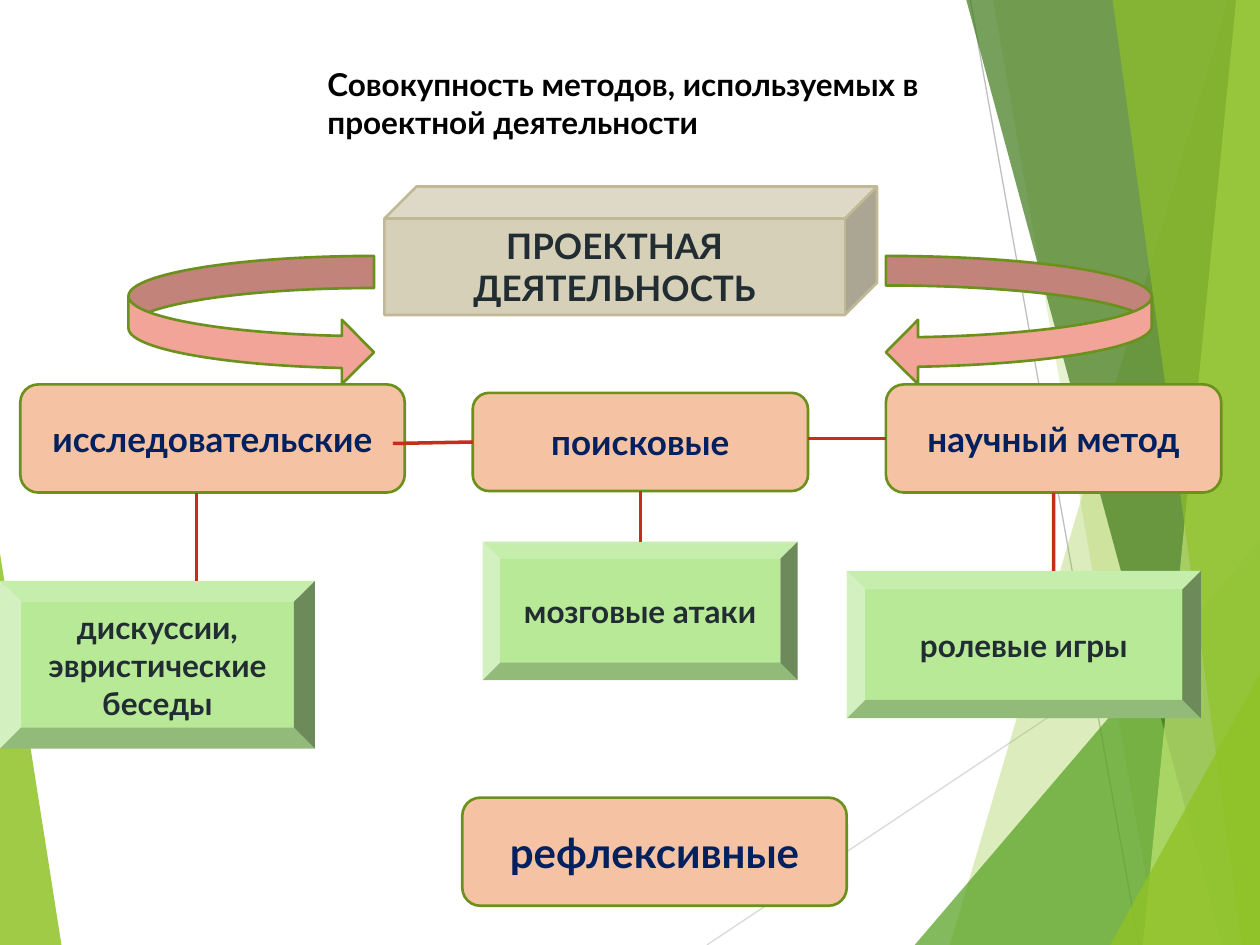
from typing import NamedTuple, Optional

from lxml.etree import SubElement
from pptx import Presentation
from pptx.dml.color import RGBColor
from pptx.enum.shapes import MSO_CONNECTOR, MSO_SHAPE
from pptx.enum.text import MSO_ANCHOR, PP_ALIGN
from pptx.oxml.ns import qn
from pptx.util import Cm, Pt

WIDE, HIGH = 25.4, 19.05
FONT = "Lato"
NAVY, SLATE, BLACK = "002060", "212D32", "000000"
PEACH, ROSE, MINT, SAND = "F5C2A3", "F2A499", "B7E996", "D6D0B8"
OLIVE, TAN, RED = "6B901C", "C1B995", "C42F1A"
LIME, GREEN, FOREST, PALE = "90C226", "54A021", "3F7819", "C0E474"
ROUND, BEVEL, CUBE = MSO_SHAPE.ROUNDED_RECTANGLE, MSO_SHAPE.BEVEL, MSO_SHAPE.CUBE


class Facet(NamedTuple):
    points: list
    color: str
    alpha: int


class Box(NamedTuple):
    kind: int
    place: tuple
    fill: str
    edge: Optional[str]
    lines: tuple = ()
    size: int = 20
    ink: str = NAVY


class Bend(NamedTuple):
    place: tuple
    width: float
    flip: bool


class Link(NamedTuple):
    start: tuple
    end: tuple
    head: Optional[str] = None
    tail: Optional[str] = None
    sites: tuple = (3, 1)


def band(top: float, base: float) -> list:
    """Return the outline between a slanted edge and the right side."""
    return [(top, 0), (base, HIGH), (WIDE, HIGH), (WIDE, 0)]


def wedge(left: float, top: float) -> list:
    """Return a triangle standing in the lower right corner."""
    return [(left, HIGH), (WIDE, top), (WIDE, HIGH)]


FACETS = [
    Facet([(0, 11.15), (1.24, HIGH), (0, HIGH)], LIME, 85),
    Facet(band(24.76, 19.15), LIME, 30),
    Facet(band(20.02, 23.34), LIME, 20),
    Facet(wedge(18.44, 10.9), GREEN, 72),
    Facet(band(19.48, 24.64), FOREST, 70),
    Facet(band(24.92, 23.04), PALE, 70),
    Facet(band(22.43, 25.04), LIME, 65),
    Facet(wedge(22.38, 13.59), LIME, 80),
]
BENDS = [
    Bend((2.59, 5.16, 4.95, 2.59), 0.25, False),
    Bend((17.86, 5.16, 5.36, 2.59), 0.23, True),
]
TOPIC = Box(CUBE, (7.75, 3.76, 9.93, 2.59), SAND, TAN,
            ("ПРОЕКТНАЯ ДЕЯТЕЛЬНОСТЬ",), 20, SLATE)
BOXES = [
    Box(ROUND, (0.41, 7.75, 7.75, 2.18), PEACH, OLIVE, ("исследовательские",)),
    Box(ROUND, (9.53, 7.92, 6.76, 1.98), PEACH, OLIVE, ("поисковые",)),
    Box(ROUND, (17.86, 7.75, 6.76, 2.18), PEACH, OLIVE, ("научный метод",)),
    Box(BEVEL, (0, 11.71, 6.35, 3.38), MINT, None,
        ("дискуссии,", "эвристические беседы"), 18, SLATE),
    Box(BEVEL, (9.73, 10.92, 6.35, 2.79), MINT, None, ("мозговые атаки",), 18, SLATE),
    Box(BEVEL, (17.07, 11.51, 7.14, 2.97), MINT, None, ("ролевые игры",), 18, SLATE),
    Box(ROUND, (9.32, 16.08, 7.75, 2.18), PEACH, OLIVE, ("рефлексивные",), 24),
]
LINKS = [
    Link((3.96, 9.93), (3.96, 11.71)),
    Link((7.92, 8.94), (9.53, 8.91), tail="поисковые"),
    Link((16.29, 8.84), (17.86, 8.84), tail="научный метод"),
    Link((21.24, 9.93), (21.24, 11.51), head="научный метод", sites=(2, 0)),
    Link((12.91, 9.9), (12.91, 10.92), head="поисковые", sites=(2, 0)),
]


def tint(target, color: str) -> None:
    """Give a fill a solid hex colour."""
    target.solid()
    target.fore_color.rgb = RGBColor.from_string(color)


def style(shape, fill: str, edge: Optional[str]) -> None:
    """Set the fill and outline of a shape and drop its shadow."""
    shape.shadow.inherit = False
    tint(shape.fill, fill)
    if edge:
        tint(shape.line.fill, edge)
        shape.line.width = Pt(1.5)
    else:
        shape.line.fill.background()


def write(frame, lines: tuple, size: int, ink: str, align: int) -> None:
    """Put bold lines of text into a frame."""
    frame.word_wrap = True
    for index, text in enumerate(lines):
        para = frame.add_paragraph() if index else frame.paragraphs[0]
        para.alignment = align
        run = para.add_run()
        run.text = text
        run.font.name = FONT
        run.font.size = Pt(size)
        run.font.bold = True
        run.font.color.rgb = RGBColor.from_string(ink)


def draw_facet(slide, facet: Facet) -> None:
    """Draw one translucent background facet."""
    first, *rest = [(Cm(x), Cm(y)) for x, y in facet.points]
    pen = slide.shapes.build_freeform(*first)
    pen.add_line_segments(rest, close=True)
    shape = pen.convert_to_shape()
    style(shape, facet.color, None)
    color = shape.element.spPr.find(qn("a:solidFill"))[0]
    SubElement(color, qn("a:alpha"), val=str(facet.alpha * 1000))


def draw_line(slide, start: tuple, end: tuple, color: str, width: float):
    """Draw a straight line without a shadow."""
    line = slide.shapes.add_connector(
        MSO_CONNECTOR.STRAIGHT, *map(Cm, start + end))
    tint(line.line.fill, color)
    line.line.width = Pt(width)
    SubElement(line.element.spPr, qn("a:effectLst"))
    return line


def draw_box(slide, box: Box):
    """Draw a labelled box."""
    shape = slide.shapes.add_shape(box.kind, *map(Cm, box.place))
    style(shape, box.fill, box.edge)
    shape.text_frame.vertical_anchor = MSO_ANCHOR.MIDDLE
    write(shape.text_frame, box.lines, box.size, box.ink, PP_ALIGN.CENTER)
    return shape


def draw_bend(slide, bend: Bend) -> None:
    """Draw a curved arrow, mirrored if asked."""
    shape = slide.shapes.add_shape(
        MSO_SHAPE.CURVED_RIGHT_ARROW, *map(Cm, bend.place))
    style(shape, ROSE, OLIVE)
    for index, value in enumerate((bend.width, 0.5, 0.25)):
        shape.adjustments[index] = value
    if bend.flip:
        shape.element.spPr.xfrm.set("flipH", "1")


def draw_link(slide, link: Link, named: dict) -> None:
    """Draw a red link and join it to the boxes it names."""
    line = draw_line(slide, link.start, link.end, RED, 2)
    if link.head:
        line.begin_connect(named[link.head], link.sites[0])
    if link.tail:
        line.end_connect(named[link.tail], link.sites[1])


def main() -> None:
    """Build the slide and save it."""
    deck = Presentation()
    deck.slide_width, deck.slide_height = Cm(WIDE), Cm(HIGH)
    slide = deck.slides.add_slide(deck.slide_layouts[6])
    draw_facet(slide, FACETS[0])
    draw_line(slide, (14.25, HIGH), (WIDE, 11.61), "D9D9D9", 0.75)
    draw_line(slide, (19.56, 0), (22.96, HIGH), "BFBFBF", 0.75)
    for facet in FACETS[1:]:
        draw_facet(slide, facet)
    draw_box(slide, TOPIC)
    for bend in BENDS:
        draw_bend(slide, bend)
    named = {box.lines[0]: draw_box(slide, box) for box in BOXES}
    title = slide.shapes.add_textbox(*map(Cm, (6.35, 1.19, 12.7, 1.8)))
    write(title.text_frame,
          ("Совокупность методов, используемых в проектной деятельности",),
          18, BLACK, PP_ALIGN.LEFT)
    for link in LINKS:
        draw_link(slide, link, named)
    deck.save("out.pptx")


if __name__ == "__main__":
    main()
